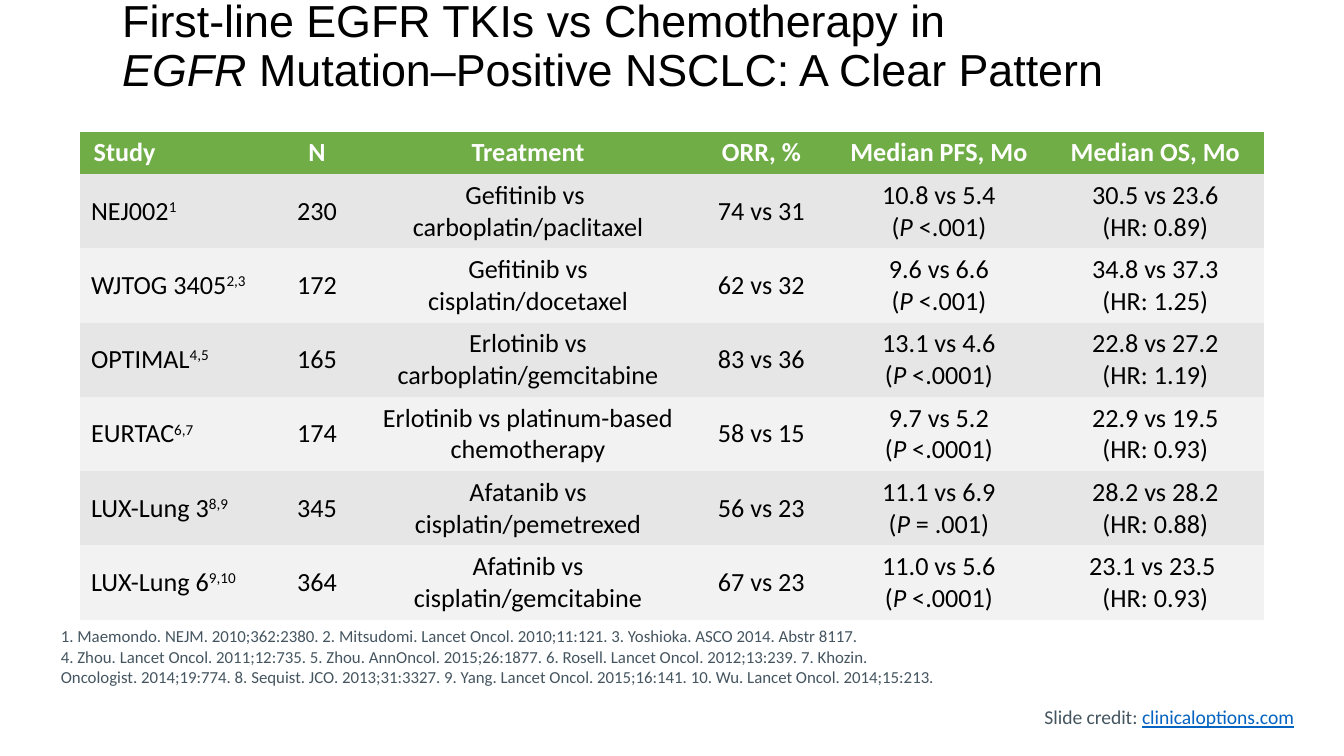
import copy
import pptx
import pptx.util
import pptx.dml.color
import pptx.enum.text
import pptx.oxml.ns

Cm = pptx.util.Cm
Pt = pptx.util.Pt
qn = pptx.oxml.ns.qn
Align = pptx.enum.text.PP_ALIGN
Anchor = pptx.enum.text.MSO_ANCHOR
Fit = pptx.enum.text.MSO_AUTO_SIZE

TITLE = "First-line EGFR TKIs vs Chemotherapy in \v|EGFR| Mutation–Positive NSCLC: A Clear Pattern"
HEAD = ["Study", "N", "Treatment", "ORR, %", "Median PFS, Mo", "Median OS, Mo"]
ROWS = [
    ["NEJ002|1", "230", "Gefitinib vs \vcarboplatin/paclitaxel", "74 vs 31",
     "10.8 vs 5.4\n(|P| <.001)", "30.5 vs 23.6\n(HR: 0.89)"],
    ["WJTOG 3405|2,3", "172", "Gefitinib vs\ncisplatin/docetaxel", "62 vs 32",
     "9.6 vs 6.6\n(|P| <.001)", "34.8 vs 37.3\n(HR: 1.25)"],
    ["OPTIMAL|4,5", "165", "Erlotinib vs\ncarboplatin/gemcitabine", "83 vs 36",
     "13.1 vs 4.6\n(|P| <.0001)", "22.8 vs 27.2\n(HR: 1.19)"],
    ["EURTAC|6,7", "174", "Erlotinib vs platinum-based chemotherapy", "58 vs 15",
     "9.7 vs 5.2\n(|P| <.0001)", "22.9 vs 19.5\n(HR: 0.93)"],
    ["LUX-Lung 3|8,9", "345", "Afatanib vs\ncisplatin/pemetrexed", "56 vs 23",
     "11.1 vs 6.9\n(|P| = .001)", "28.2 vs 28.2\v(HR: 0.88)"],
    ["LUX-Lung 6|9,10", "364", "Afatinib vs cisplatin/gemcitabine", "67 vs 23",
     "11.0 vs 5.6\n(|P| <.0001)", "23.1 vs 23.5 \v(HR: 0.93)"],
]
REFS = (
    "1. Maemondo. NEJM. 2010;362:2380. 2. Mitsudomi. Lancet Oncol. 2010;11:121. "
    "3. Yoshioka. ASCO 2014. Abstr 8117. \v"
    "4. Zhou. Lancet Oncol. 2011;12:735. 5. Zhou. AnnOncol. 2015;26:1877. "
    "6. Rosell. Lancet Oncol. 2012;13:239. 7. Khozin. \v"
    "Oncologist. 2014;19:774. 8. Sequist. JCO. 2013;31:3327. "
    "9. Yang. Lancet Oncol. 2015;16:141. 10. Wu. Lancet Oncol. 2014;15:213."
)
CREDIT = "Slide credit: |clinicaloptions.com"
WIDTHS = [3.58, 1.78, 6.2, 2.62, 4.09, 4.09]
GREEN, BANDS, SLATE, BLUE = "70AD47", ["E7E6E6", "F2F2F2"], "455560", "0563C1"


def paint(target, code):
    target.rgb = pptx.dml.color.RGBColor.from_string(code)


def write(frame, text, size, color, face="Calibri", align=Align.LEFT, bold=False):
    marked = []
    for i, line in enumerate(text.split("\n")):
        para = frame.paragraphs[0] if i == 0 else frame.add_paragraph()
        first, *rest = line.split("|")
        para.text = first
        para.alignment = align
        for j, part in enumerate(rest):
            run = para.add_run()
            run.text = part
            if j % 2 == 0:
                marked.append(run)
        for run in para.runs:
            font = run.font
            font.size, font.name, font.bold = Pt(size), face, bold
            paint(font.color, color)
        for brk in para._p.findall(qn("a:br")):
            brk.append(copy.deepcopy(para.runs[0]._r.rPr))
    return marked


def inset(box, side):
    box.margin_left = box.margin_right = Cm(side)
    box.margin_top = box.margin_bottom = Cm(0.1)


def label(slide, place, text, size, anchor):
    frame = slide.shapes.add_textbox(*map(Cm, place)).text_frame
    frame.word_wrap = True
    frame.vertical_anchor = anchor
    inset(frame, 0.18)
    return write(frame, text, size, SLATE)


def head(slide):
    title = slide.shapes.title
    title.left, title.top, title.width, title.height = map(Cm, (2.13, -0.25, 23.22, 2.29))
    frame = title.text_frame
    frame.auto_size = Fit.NONE
    frame.vertical_anchor = Anchor.MIDDLE
    inset(frame, 0.18)
    for run in write(frame, TITLE, 24, "000000", "Arial"):
        run.font.italic = True
    frame.paragraphs[0].line_spacing = 0.9


def grid(slide):
    rows = [HEAD] + ROWS
    place = map(Cm, (1.52, 2.49, sum(WIDTHS), 9.17))
    table = slide.shapes.add_table(len(rows), len(HEAD), *place).table
    table._tbl.tblPr.find(qn("a:tableStyleId")).text = "{2D5ABB26-0587-4C30-8999-92F81FD0307C}"
    table.horz_banding = False
    for col, width in zip(table.columns, WIDTHS):
        col.width = Cm(width)
    for r, texts in enumerate(rows):
        top = r == 0
        table.rows[r].height = Cm(0.77 if top else 1.4)
        for c, text in enumerate(texts):
            cell = table.cell(r, c)
            cell.fill.solid()
            paint(cell.fill.fore_color, GREEN if top else BANDS[(r - 1) % 2])
            cell.vertical_anchor = Anchor.MIDDLE
            inset(cell, 0.25 if top else 0.2)
            marked = write(cell.text_frame, text, 14, "FFFFFF" if top else "000000",
                           align=Align.CENTER if c else Align.LEFT, bold=top)
            for run in marked:
                if c:
                    run.font.italic = True
                else:
                    run.font._element.set("baseline", "30000")


def main():
    deck = pptx.Presentation()
    deck.slide_width, deck.slide_height = Cm(25.4), Cm(14.29)
    slide = deck.slides.add_slide(deck.slide_layouts[5])
    head(slide)
    grid(slide)
    label(slide, (0.97, 11.73, 17.25, 1.35), REFS, 9, Anchor.BOTTOM)
    for run in label(slide, (19.56, 13.23, 5.18, 0.64), CREDIT, 10.5, Anchor.TOP):
        run.font.underline = True
        paint(run.font.color, BLUE)
    deck.save("out.pptx")


if __name__ == "__main__":
    main()
